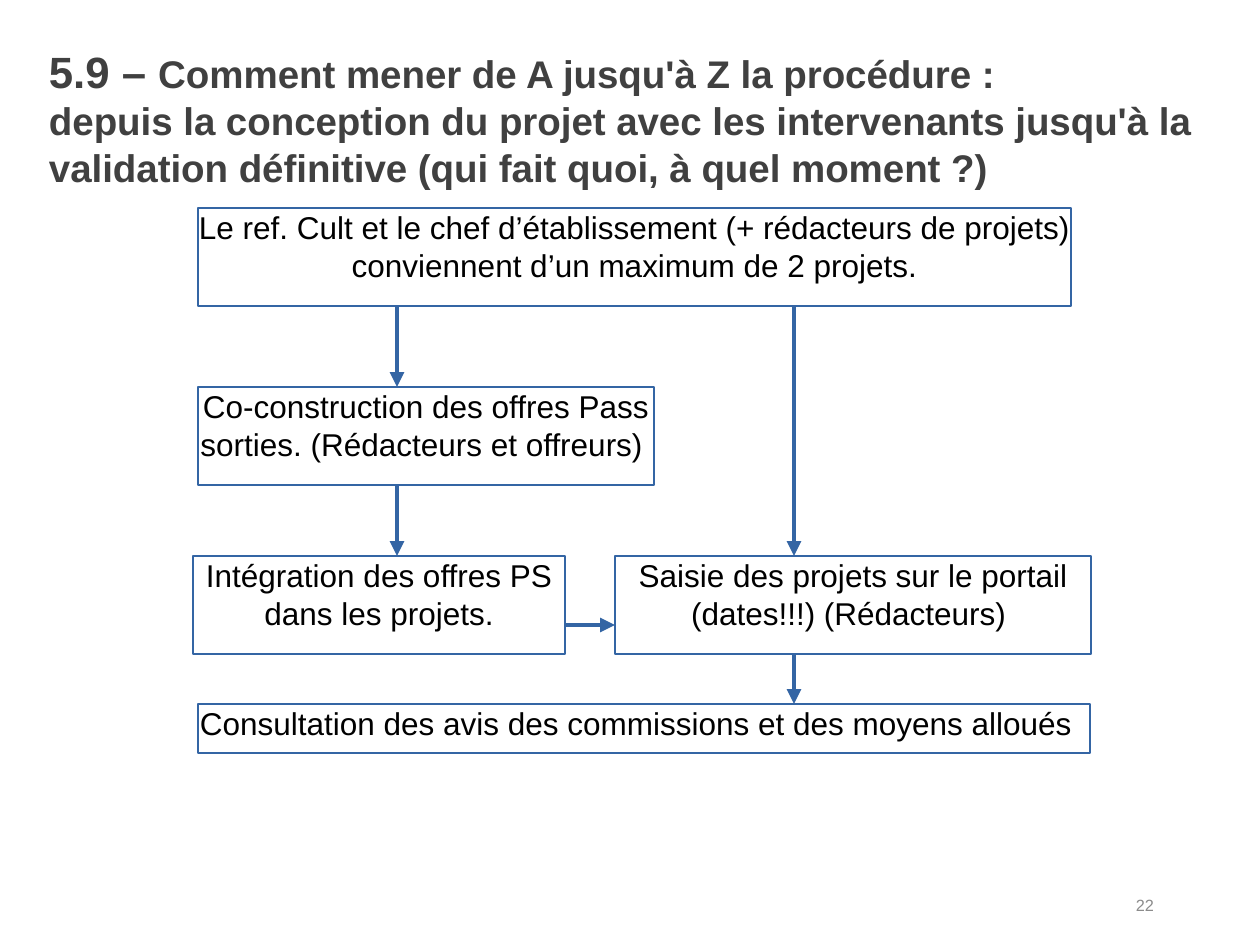
from pptx import Presentation
from pptx.dml.color import RGBColor
from pptx.enum.shapes import MSO_CONNECTOR as Connector, MSO_SHAPE as Shape
from pptx.enum.text import MSO_ANCHOR as Anchor, PP_ALIGN as Align
from pptx.oxml.ns import qn
from pptx.util import Pt
from lxml.etree import SubElement

EMU_PER_PX = 914400 / 126
COLORS = {"title": "404040", "text": "000000", "blue": "3465A4", "number": "8B8B8B"}


def px(*lengths):
    return [round(length * EMU_PER_PX) for length in lengths]


class FlowPage:
    font_name = "Arial"

    def __init__(self, deck):
        self.page = deck.slides.add_slide(deck.slide_layouts[6])

    def style(self, font, size, color, bold=False):
        font.name, font.size, font.bold = self.font_name, Pt(size), bold
        font.color.rgb = RGBColor.from_string(COLORS[color])

    def margins(self, frame, left=0, top=0, right=0, bottom=0):
        (frame.margin_left, frame.margin_top,
         frame.margin_right, frame.margin_bottom) = px(left, top, right, bottom)

    def title(self, place, lead, lines):
        frame = self.page.shapes.add_textbox(*px(*place)).text_frame
        frame.word_wrap = False
        self.margins(frame)
        for index, line in enumerate(lines):
            para = frame.add_paragraph() if index else frame.paragraphs[0]
            self.style(para.font, 22, "title", bold=True)
            if index == 0:
                span = para.add_run()
                span.text = lead
                span.font.size = Pt(25)
            para.add_run().text = line

    def number(self, place, text):
        frame = self.page.shapes.add_textbox(*px(*place)).text_frame
        frame.word_wrap = True
        frame.vertical_anchor = Anchor.MIDDLE
        self.margins(frame, 13, 6, 13, 6)
        para = frame.paragraphs[0]
        para.text = text
        self.style(para.font, 9.3, "number")

    def step(self, place, text, right=0):
        box = self.page.shapes.add_shape(Shape.RECTANGLE, *px(*place))
        box.shadow.inherit = False
        box.fill.background()
        box.line.color.rgb = RGBColor.from_string(COLORS["blue"])
        box.line.width = Pt(0.75)
        frame = box.text_frame
        frame.word_wrap = True
        frame.vertical_anchor = Anchor.TOP
        self.margins(frame, right=right)
        para = frame.paragraphs[0]
        para.text = text
        para.alignment = Align.CENTER
        self.style(para.font, 18, "text")

    def arrow(self, *ends):
        link = self.page.shapes.add_connector(Connector.STRAIGHT, *px(*ends))
        link.line.color.rgb = RGBColor.from_string(COLORS["blue"])
        link.line.width = Pt(2.83)
        SubElement(link.line._get_or_add_ln(), qn("a:tailEnd"), type="triangle")
        SubElement(link._element.spPr, qn("a:effectLst"))


def main():
    deck = Presentation()
    deck.slide_width, deck.slide_height = px(1260, 945)
    flow = FlowPage(deck)

    # Title and page number
    flow.title((49, 45, 1157, 145), "5.9 – ", [
        "Comment mener de A jusqu'à Z la procédure :",
        "depuis la conception du projet avec les intervenants jusqu'à la",
        "validation définitive (qui fait quoi, à quel moment ?)",
    ])
    flow.number((1123, 881, 62, 49), "22")

    # Steps
    flow.step((198, 208, 873, 98), "Le ref. Cult et le chef d’établissement "
              "(+ rédacteurs de projets) conviennent d’un maximum de 2 projets.")
    flow.step((198, 387, 456, 98), "Co-construction des offres Pass sorties. "
              "(Rédacteurs et offreurs) ")
    flow.step((193, 556, 372, 98), "Intégration des offres PS dans les projets.")
    flow.step((615, 556, 476, 98),
              "Saisie des projets sur le portail (dates!!!) (Rédacteurs) ")
    flow.step((198, 704, 892, 49),
              "Consultation des avis des commissions et des moyens alloués", right=16)

    # Arrows down the two branches, then across
    left_branch, right_branch = 397, 794
    for x, top, bottom in [(left_branch, 307, 387), (left_branch, 486, 556),
                           (right_branch, 307, 556), (right_branch, 655, 704)]:
        flow.arrow(x, top, x, bottom)
    flow.arrow(566, 625, 615, 625)

    deck.save("out.pptx")


if __name__ == "__main__":
    main()
